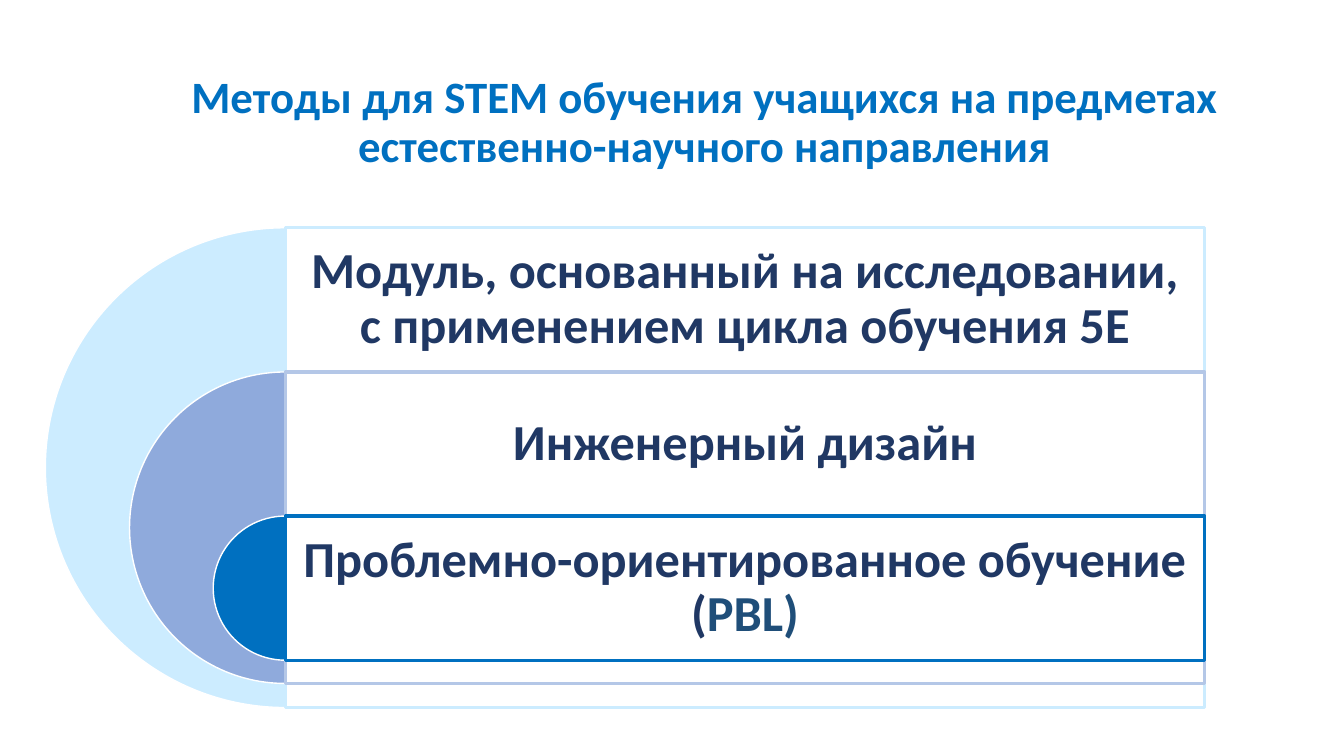
import pptx
import pptx.util
import pptx.dml.color
import pptx.enum.shapes
import pptx.enum.text
import lxml.etree
from pptx.util import Inches

COLORS = {
    "white": "FFFFFF", "blue": "0070C0", "navy": "203864", "steel": "1F4E79",
    "pale": "CCECFF", "periwinkle": "8FAADC", "lavender": "B4C7E7",
}
SHAPES = pptx.enum.shapes.MSO_SHAPE


def rgb(name):
    return pptx.dml.color.RGBColor.from_string(COLORS[name])


def add_label(left, top, width, height, inset, size, spans):
    """Add a centred bold text box; spans are (text, colour name) pairs."""
    box = slide.shapes.add_textbox(*map(Inches, (left, top, width, height)))
    frame_format = {
        "word_wrap": True,
        "vertical_anchor": pptx.enum.text.MSO_ANCHOR.MIDDLE,
        "margin_left": Inches(inset[0]), "margin_right": Inches(inset[0]),
        "margin_top": Inches(inset[1]), "margin_bottom": Inches(inset[1]),
    }
    for name, value in frame_format.items():
        setattr(box.text_frame, name, value)
    para = box.text_frame.paragraphs[0]
    para.alignment = pptx.enum.text.PP_ALIGN.CENTER
    para.line_spacing = 0.9
    for text, color in spans:
        span = para.add_run()
        span.text = text
        font_format = {"name": "Calibri", "size": pptx.util.Pt(size), "bold": True}
        for name, value in font_format.items():
            setattr(span.font, name, value)
        span.font.color.rgb = rgb(color)


deck = pptx.Presentation()
deck.slide_width = Inches(13.33)
deck.slide_height = Inches(7.5)
slide = deck.slides.add_slide(deck.slide_layouts[6])

add_label(1.24, 0.5, 11.5, 1.45, (0.1, 0.05), 32, [
    ("Методы для STEM обучения учащихся на предметах естественно-научного направления", "blue"),
])

# Nested half circles, each with a panel that starts at the circle's centre
panel_left, first_top, panel_width, row_height = 2.83, 2.26, 9.12, 1.43
methods = [
    (4.76, "pale", "pale",
     [("Модуль, основанный на исследовании, с применением цикла обучения 5E", "navy")]),
    (3.09, "periwinkle", "lavender", [("Инженерный дизайн", "navy")]),
    (1.43, "blue", "blue",
     [("Проблемно-ориентированное обучение (", "navy"), ("PBL)", "steel")]),
]
for row, (diameter, pie_color, border_color, spans) in enumerate(methods):
    top = first_top + row * row_height
    pie = slide.shapes.add_shape(
        SHAPES.PIE, Inches(panel_left - diameter / 2), Inches(top),
        Inches(diameter), Inches(diameter))
    pie.adjustments[0] = 54
    pie.adjustments[1] = 162
    panel = slide.shapes.add_shape(
        SHAPES.RECTANGLE, Inches(panel_left), Inches(top),
        Inches(panel_width), Inches(diameter))
    for shape, fill, line, weight in (
            (pie, pie_color, "white", 1), (panel, "white", border_color, 2.25)):
        shape.shadow.inherit = False
        shape.fill.solid()
        shape.fill.fore_color.rgb = rgb(fill)
        shape.line.color.rgb = rgb(line)
        shape.line.width = pptx.util.Pt(weight)
    panel_color = panel.fill._xPr.find(".//" + pptx.oxml.ns.qn("a:srgbClr"))
    lxml.etree.SubElement(panel_color, pptx.oxml.ns.qn("a:alpha"), val="90000")
    add_label(panel_left, top, panel_width, row_height, (0.15, 0.15), 36, spans)

deck.save("out.pptx")
